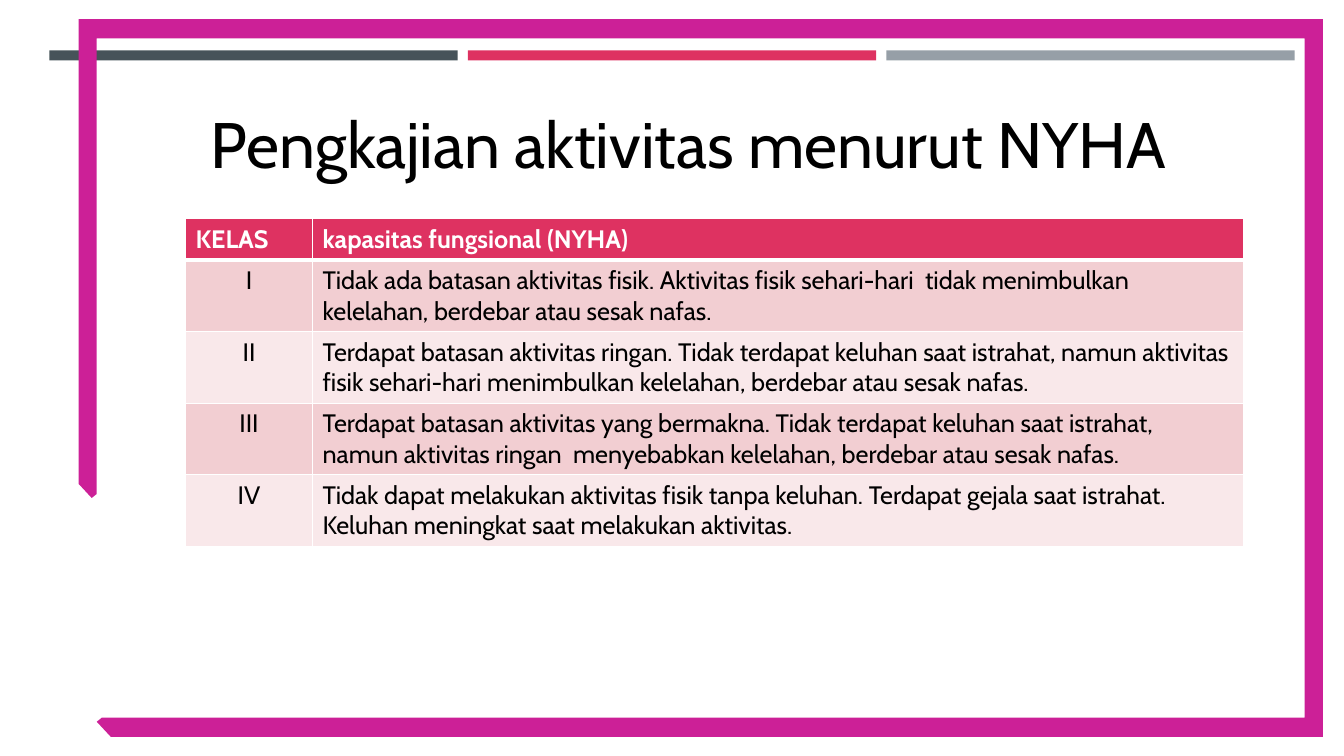
from typing import NamedTuple

from lxml import etree
from pptx import Presentation
from pptx.dml.color import RGBColor
from pptx.enum.text import MSO_ANCHOR, PP_ALIGN
from pptx.enum.shapes import MSO_SHAPE
from pptx.oxml.ns import qn
from pptx.util import Inches, Pt

RECT = MSO_SHAPE.RECTANGLE
MIDDLE = MSO_ANCHOR.MIDDLE
LEFT, CENTER = PP_ALIGN.LEFT, PP_ALIGN.CENTER
FONT = "Cabin"
ROSE, BLACK, WHITE = "DE3261", "000000", "FFFFFF"
BANDS = ("F2CED2", "F9E8EA")


class Bar(NamedTuple):
    left: float
    color: str


class Grade(NamedTuple):
    name: str
    text: str


BARS = [Bar(0.49, "465359"), Bar(4.64, ROSE), Bar(8.79, "969FA7")]
FRAME = [
    (0.78, 0.19), (13.12, 0.19), (13.12, 7.31), (1.1, 7.31), (0.96, 7.16),
    (1.01, 7.12), (12.94, 7.12), (12.94, 0.38), (0.96, 0.38), (0.96, 4.9),
    (0.91, 4.94), (0.78, 4.8),
]
GRADES = [
    Grade("KELAS", "kapasitas fungsional (NYHA)"),
    Grade("I", "Tidak ada batasan aktivitas fisik. Aktivitas fisik sehari-hari  tidak "
          "menimbulkan kelelahan, berdebar atau sesak nafas."),
    Grade("II", "Terdapat batasan aktivitas ringan. Tidak terdapat keluhan saat istrahat, "
          "namun aktivitas fisik sehari-hari menimbulkan kelelahan, berdebar atau sesak nafas."),
    Grade("III", "Terdapat batasan aktivitas yang bermakna. Tidak terdapat keluhan saat istrahat, "
          "namun aktivitas ringan  menyebabkan kelelahan, berdebar atau sesak nafas."),
    Grade("IV", "Tidak dapat melakukan aktivitas fisik tanpa keluhan. Terdapat gejala saat "
          "istrahat.\vKeluhan meningkat saat melakukan aktivitas."),
]


def rgb(value: str) -> RGBColor:
    return RGBColor.from_string(value)


def paint(shape, color: str) -> None:
    shape.shadow.inherit = False
    shape.fill.solid()
    shape.fill.fore_color.rgb = rgb(color)
    shape.line.fill.background()


def write(frame, text: str, *, size: float = 18, color: str = BLACK, bold: bool = False,
          align: PP_ALIGN = LEFT, lead: float = 1.0, after: float = 0) -> None:
    frame.word_wrap = True
    para = frame.paragraphs[0]
    para.text = text
    para.alignment = align
    para.line_spacing = lead
    para.space_after = Pt(after)
    for run in para.runs:
        font = run.font
        font.name, font.size, font.bold = FONT, Pt(size), bold
        font.color.rgb = rgb(color)


def edge(cell, **widths: float) -> None:
    props = cell._tc.get_or_add_tcPr()
    for spot, side in enumerate("LRTB"):
        line = etree.Element(qn(f"a:ln{side}"), w=str(Pt(widths.get(side, 1))))
        fill = etree.SubElement(line, qn("a:solidFill"))
        etree.SubElement(fill, qn("a:srgbClr"), val=WHITE)
        props.insert(spot, line)


def draw_bar(slide, bar: Bar) -> None:
    shape = slide.shapes.add_shape(RECT, Inches(bar.left), Inches(0.5), Inches(4.05), Inches(0.1))
    paint(shape, bar.color)


def draw_frame(slide) -> None:
    dots = [(Inches(x), Inches(y)) for x, y in FRAME]
    pen = slide.shapes.build_freeform(*dots[0])
    pen.add_line_segments(dots[1:], close=True)
    paint(pen.convert_to_shape(), "CC2097")


def draw_title(slide) -> None:
    box = slide.shapes.add_textbox(Inches(1.99), Inches(1.07), Inches(11.18), Inches(0.79))
    box.text_frame.vertical_anchor = MIDDLE
    write(box.text_frame, "Pengkajian aktivitas menurut NYHA", size=45.9, lead=0.9, after=6)


def draw_table(slide) -> None:
    table = slide.shapes.add_table(len(GRADES), 2, Inches(1.84), Inches(2.17),
                                   Inches(10.49), Inches(3.25)).table
    for col, width in zip(table.columns, (1.26, 9.23)):
        col.width = Inches(width)
    for i, grade in enumerate(GRADES):
        head = i == 0
        table.rows[i].height = Inches(0.41 if head else 0.71)
        for j, text in enumerate(grade):
            cell = table.cell(i, j)
            cell.fill.solid()
            cell.fill.fore_color.rgb = rgb(ROSE if head else BANDS[(i - 1) % 2])
            edge(cell, B=3 if head else 1, T=3 if i == 1 else 1)
            write(cell.text_frame, text, color=WHITE if head else BLACK, bold=head,
                  align=CENTER if j == 0 and not head else LEFT)


def main() -> None:
    deck = Presentation()
    deck.slide_width, deck.slide_height = Inches(13.33), Inches(7.5)
    slide = deck.slides.add_slide(deck.slide_layouts[6])
    for bar in BARS:
        draw_bar(slide, bar)
    draw_frame(slide)
    draw_title(slide)
    draw_table(slide)
    deck.save("out.pptx")


if __name__ == "__main__":
    main()
